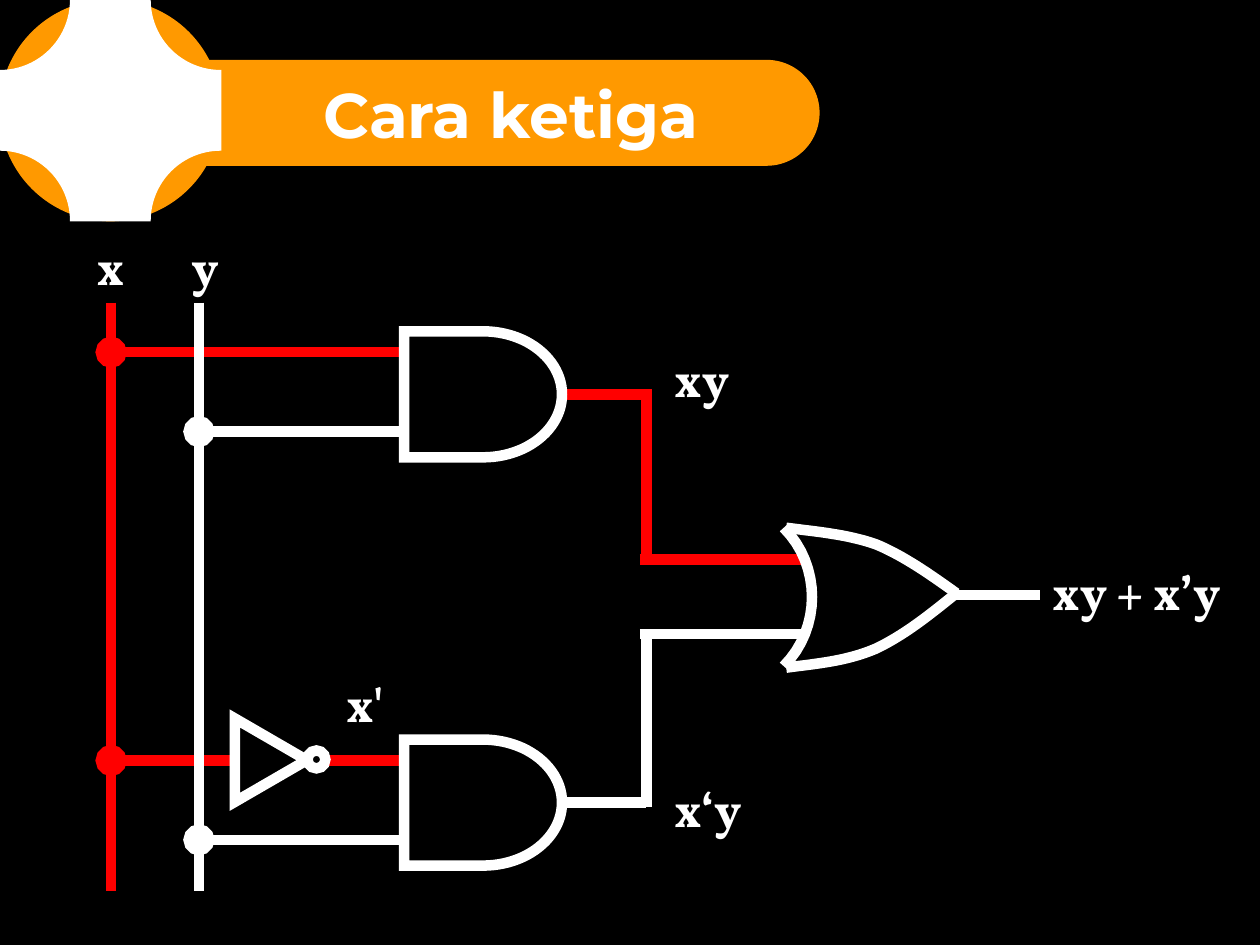
from lxml.etree import SubElement
from pptx import Presentation
from pptx.dml.color import RGBColor
from pptx.enum.shapes import MSO_CONNECTOR, MSO_SHAPE as Preset
from pptx.enum.text import MSO_ANCHOR, MSO_AUTO_SIZE, PP_ALIGN
from pptx.oxml.ns import qn
from pptx.util import Cm, Pt

WHITE, BLACK, RED, ORANGE = "FFFFFF", "000000", "FF0000", "FF9900"
WIRE_WIDTH = 6
GATE_W, GATE_H = 3.18, 2.54
INPUT_OFFSETS = 0.42, 2.02


def rgb(value):
    return RGBColor.from_string(value)


def style(shape, line, width=WIRE_WIDTH, fill=None):
    shape.shadow.inherit = False
    if fill:
        shape.fill.solid()
        shape.fill.fore_color.rgb = rgb(fill)
    else:
        shape.fill.background()
    shape.line.color.rgb = rgb(line)
    shape.line.width = Pt(width)
    SubElement(shape.line._get_or_add_ln(), qn("a:miter"), lim="800000")


def add_preset(shapes, preset, box, **look):
    shape = shapes.add_shape(preset, *map(Cm, box))
    style(shape, **look)
    return shape


def format_run(paragraph, font, size):
    run = paragraph.runs[0]
    run.font.name, run.font.size, run.font.bold = font, Pt(size), True
    run.font.color.rgb = rgb(WHITE)


def add_label(slide, text, left, top, width):
    label = slide.shapes.add_textbox(*map(Cm, (left, top, width, 1.45)))
    frame = label.text_frame
    frame.text = text
    frame.word_wrap = False
    frame.auto_size = MSO_AUTO_SIZE.SHAPE_TO_FIT_TEXT
    format_run(frame.paragraphs[0], "Vollkorn", 28)


def add_wire(slide, color, x1, y1, x2, y2, junction=False):
    """Draw a wire; a junction puts a dot at its start."""
    wire = slide.shapes.add_connector(MSO_CONNECTOR.STRAIGHT, *map(Cm, (x1, y1, x2, y2)))
    wire.line.color.rgb = rgb(color)
    wire.line.width = Pt(WIRE_WIDTH)
    if junction:
        SubElement(wire.line._get_or_add_ln(), qn("a:headEnd"), type="oval")
    SubElement(wire._element.spPr, qn("a:effectLst"))


def bezier(p0, p1, p2, p3, steps=16):
    """Return the points of a cubic curve after its start."""
    points = []
    for step in range(1, steps + 1):
        t = step / steps
        weights = (1 - t) ** 3, 3 * t * (1 - t) ** 2, 3 * t * t * (1 - t), t ** 3
        points.append(tuple(sum(w * p[axis] for w, p in zip(weights, (p0, p1, p2, p3)))
                            for axis in (0, 1)))
    return points


def add_curve(shapes, left, top, knots):
    """Draw joined cubic curves; knots are a start, then three points per curve."""
    points = [knots[0]]
    for i in range(0, len(knots) - 1, 3):
        points += bezier(*knots[i:i + 4])
    places = [(Cm(left + x), Cm(top + y)) for x, y in points]
    builder = shapes.build_freeform(*places[0])
    builder.add_line_segments(places[1:], close=False)
    style(builder.convert_to_shape(), WHITE)


def add_or_gate(slide, left, top):
    shapes = slide.shapes.add_group_shape().shapes
    tip = (3.48, 1.32)
    back = [(0, 0), (0.76, 0.76), (0.76, 2.03), (0, 2.79)]
    upper = [(0.05, 0), (0.66, 0.08), (1.27, 0.13), (1.85, 0.33), (2.41, 0.56), (2.95, 0.94), tip]
    lower = [(0.05, 2.82), (0.66, 2.74), (1.27, 2.69), (1.85, 2.44), (2.41, 2.18), (2.95, 1.75), tip]
    for knots in (back, upper, lower):
        add_curve(shapes, left, top, knots)


def add_not_gate(slide, left, top):
    shapes = slide.shapes.add_group_shape().shapes
    triangle = add_preset(shapes, Preset.ISOSCELES_TRIANGLE, (left, top, 1.68, 1.45),
                          line=WHITE, fill=BLACK)
    triangle.rotation = 90
    add_preset(shapes, Preset.OVAL, (left + 1.58, top + 0.53, 0.36, 0.36), line=WHITE, fill=BLACK)


def add_and_gate(slide, left, top, output_color):
    output = top + GATE_H / 2
    add_wire(slide, output_color, left + GATE_W, output, 13.03, output)
    add_preset(slide.shapes, Preset.FLOWCHART_DELAY, (left, top, GATE_W, GATE_H), line=WHITE)


def add_circuit(slide, left, top):
    """Draw the circuit from the top of the x bus."""
    x_bus, y_bus, gate_left, riser = left, left + 1.77, left + 5.91, left + 10.79
    upper_gate, lower_gate = top + 0.58, top + 8.81
    upper_x, upper_y = (upper_gate + offset for offset in INPUT_OFFSETS)
    lower_x, lower_y = (lower_gate + offset for offset in INPUT_OFFSETS)
    or_left, or_top = left + 13.56, top + 4.54
    or_x, or_y, or_out = or_top + 0.64, or_top + 2.14, or_top + 1.35

    add_wire(slide, RED, x_bus, upper_x, gate_left, upper_x, junction=True)
    add_wire(slide, WHITE, y_bus, upper_y, gate_left, upper_y, junction=True)
    add_wire(slide, RED, x_bus, lower_x, left + 2.41, lower_x, junction=True)
    add_wire(slide, RED, left + 4.31, lower_x, gate_left, lower_x)
    add_wire(slide, WHITE, y_bus, lower_y, gate_left, lower_y, junction=True)
    add_wire(slide, RED, riser, top + 1.75, riser, or_x)
    add_wire(slide, WHITE, riser, or_y, riser, top + 10.16)
    for color, level in ((RED, or_x), (WHITE, or_y)):
        add_wire(slide, color, riser - 0.13, level, or_left + 0.43, level)
    add_wire(slide, WHITE, or_left + 3.45, or_out, or_left + 5.16, or_out)

    add_and_gate(slide, gate_left, upper_gate, RED)
    add_and_gate(slide, gate_left, lower_gate, WHITE)
    add_or_gate(slide, or_left, or_top)
    add_not_gate(slide, left + 2.38, lower_x - 0.73)
    for color, bus in ((RED, x_bus), (WHITE, y_bus)):
        add_wire(slide, color, bus, top, bus, top + 11.86)

    for text, dx, dy, width in (
        ("x", -0.54, -1.45, 1.07),
        ("y", 1.37, -1.45, 1.07),
        ("x'", 4.49, 7.36, 1.3),
        ("x‘y", 11.1, 9.47, 1.91),
        ("xy", 11.1, 0.81, 1.63),
        ("xy + x’y", 18.72, 5.1, 4.14),
    ):
        add_label(slide, text, left + dx, top + dy, width)


def add_title(slide, left, top):
    banner = add_preset(slide.shapes, Preset.ROUNDED_RECTANGLE,
                        (left + 2.34, top + 1.22, 14.17, 2.11),
                        line=ORANGE, width=0.75, fill=ORANGE)
    banner.adjustments[0] = 0.5
    frame = banner.text_frame
    frame.text = "Cara ketiga"
    frame.word_wrap = False
    frame.vertical_anchor = MSO_ANCHOR.MIDDLE
    title = frame.paragraphs[0]
    title.alignment = PP_ALIGN.CENTER
    title._p.get_or_add_pPr().set("marL", str(Cm(1.75)))
    format_run(title, "Montserrat", 36)

    badge = slide.shapes.add_group_shape().shapes
    box = (left, top, 4.45, 4.45)
    add_preset(badge, Preset.OVAL, box, line=ORANGE, width=0.75, fill=ORANGE)
    plaque = add_preset(badge, Preset.PLAQUE, box, line=WHITE, width=0.75, fill=WHITE)
    plaque.adjustments[0] = 0.32


def main():
    deck = Presentation()
    deck.slide_width, deck.slide_height = Cm(25.4), Cm(19.05)
    slide = deck.slides.add_slide(deck.slide_layouts[6])
    slide.background.fill.solid()
    slide.background.fill.fore_color.rgb = rgb(BLACK)
    add_circuit(slide, 2.24, 6.1)
    add_title(slide, 0, 0)
    deck.save("out.pptx")


if __name__ == "__main__":
    main()
